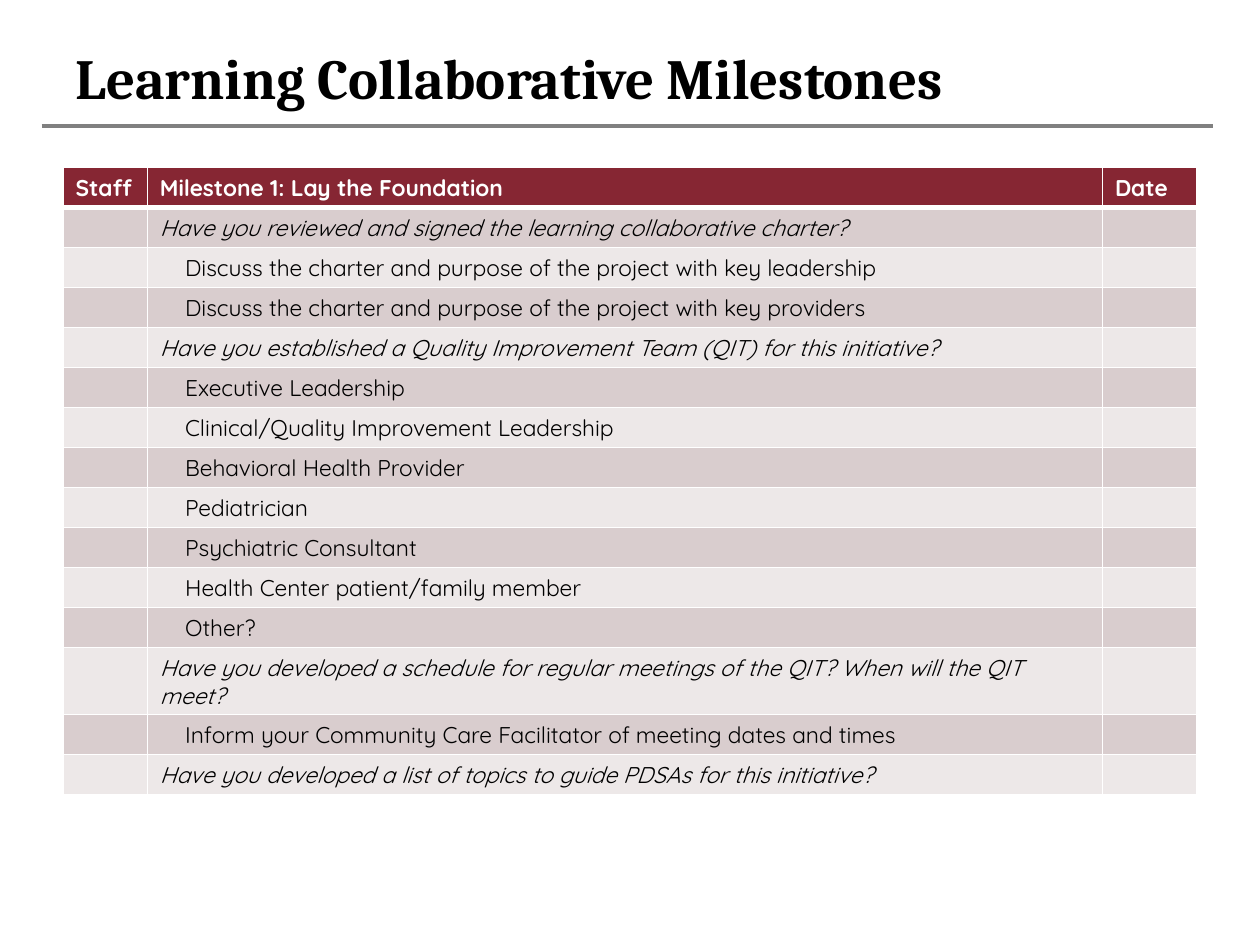
"""Build the Learning Collaborative Milestones checklist slide."""
import pptx
import pptx.dml.color
import pptx.enum.text
import pptx.oxml.ns
import pptx.util
from lxml import etree
from pptx.util import Inches

COLORS = {
    "maroon": "862633",
    "band_dark": "D9CDCE",
    "band_light": "EDE8E8",
    "rule": "808080",
    "black": "000000",
    "white": "FFFFFF",
}
TEXT_SIZE = 13
HEADINGS = ["Staff", "Milestone 1: Lay the Foundation", "Date"]
COLUMN_WIDTHS = [0.67, 7.58, 0.75]
ROW_HEIGHT = 0.31
MILESTONES = [
    ("Have you reviewed and signed the learning collaborative charter?", [
        "Discuss the charter and purpose of the project with key leadership",
        "Discuss the charter and purpose of the project with key providers",
    ]),
    ("Have you established a Quality Improvement Team (QIT) for this initiative?", [
        "Executive Leadership",
        "Clinical/Quality Improvement Leadership",
        "Behavioral Health Provider",
        "Pediatrician",
        "Psychiatric Consultant",
        "Health Center patient/family member",
        "Other?",
    ]),
    ("Have you developed a schedule for regular meetings of the QIT? When will the QIT meet?", [
        "Inform your Community Care Facilitator of meeting dates and times",
    ]),
    ("Have you developed a list of topics to guide PDSAs for this initiative?", []),
]


def color(name):
    """Return a palette colour."""
    return pptx.dml.color.RGBColor.from_string(COLORS[name])


def add_element(parent, tag, **attributes):
    """Append a DrawingML child element."""
    return etree.SubElement(parent, pptx.oxml.ns.qn(tag), attributes)


def style_run(run, face, size, ink, bold=False, italic=False):
    """Apply font settings to a run."""
    run.font.name = face
    run.font.size = pptx.util.Pt(size)
    run.font.color.rgb = color(ink)
    run.font.bold = bold
    run.font.italic = italic


def add_title(slide, wording):
    """Add the slide heading."""
    title = slide.shapes.add_textbox(Inches(0.5), Inches(0.3), Inches(9), Inches(0.62))
    frame = title.text_frame
    frame.word_wrap = True
    frame.vertical_anchor = pptx.enum.text.MSO_ANCHOR.MIDDLE
    frame.text = wording
    style_run(frame.paragraphs[0].runs[0], "Cambria", 32.4, "black", bold=True)


def add_rule(slide):
    """Add the grey line under the heading."""
    rule = slide.shapes.add_connector(
        pptx.enum.shapes.MSO_CONNECTOR.STRAIGHT,
        Inches(0.33), Inches(1), Inches(9.63), Inches(1))
    rule.line.color.rgb = color("rule")
    rule.line.width = pptx.util.Pt(2.25)
    add_element(rule._element.spPr, "a:effectLst")


def add_borders(cell, bottom):
    """Draw white cell borders with the given bottom width in points."""
    properties = cell._tc.get_or_add_tcPr()
    for side, width in {"L": 1, "R": 1, "T": 1, "B": bottom}.items():
        border = add_element(properties, f"a:ln{side}", w=str(pptx.util.Pt(width)))
        fill = add_element(border, "a:solidFill")
        add_element(fill, "a:srgbClr", val=COLORS["white"])


def fill_cell(cell, wording, fill, ink="black", bold=False, italic=False, indent=0, bottom=1):
    """Write and style one table cell."""
    add_borders(cell, bottom)
    cell.fill.solid()
    cell.fill.fore_color.rgb = color(fill)
    paragraph = cell.text_frame.paragraphs[0]
    if not wording:
        add_element(paragraph._p, "a:endParaRPr", sz=str(TEXT_SIZE * 100))
        return
    paragraph.text = wording
    if indent:
        paragraph._p.get_or_add_pPr().set("marL", str(Inches(indent)))
    style_run(paragraph.runs[0], "Quicksand", TEXT_SIZE, ink, bold, italic)


def add_checklist(slide):
    """Add the milestone table."""
    entries = []
    for question, steps in MILESTONES:
        entries.append((question, True))
        entries.extend((step, False) for step in steps)
    row_count = len(entries) + 1
    checklist = slide.shapes.add_table(
        row_count, len(HEADINGS), Inches(0.5), Inches(1.33),
        Inches(sum(COLUMN_WIDTHS)), Inches(ROW_HEIGHT * row_count)).table
    for column, width in zip(checklist.columns, COLUMN_WIDTHS):
        column.width = Inches(width)
    for row in checklist.rows:
        row.height = Inches(ROW_HEIGHT)
    for index, heading in enumerate(HEADINGS):
        fill_cell(checklist.cell(0, index), heading, "maroon", "white", bold=True, bottom=3)
    for number, (entry, is_question) in enumerate(entries, start=1):
        band = "band_dark" if number % 2 else "band_light"
        for index, wording in enumerate(["", entry, ""]):
            fill_cell(checklist.cell(number, index), wording, band,
                      italic=is_question, indent=0 if is_question else 0.2)


def main():
    """Build and save the slide."""
    deck = pptx.Presentation()
    deck.slide_width, deck.slide_height = Inches(10), Inches(7.5)
    slide = deck.slides.add_slide(deck.slide_layouts[6])
    add_rule(slide)
    add_title(slide, "Learning Collaborative Milestones")
    add_checklist(slide)
    deck.save("out.pptx")


if __name__ == "__main__":
    main()
